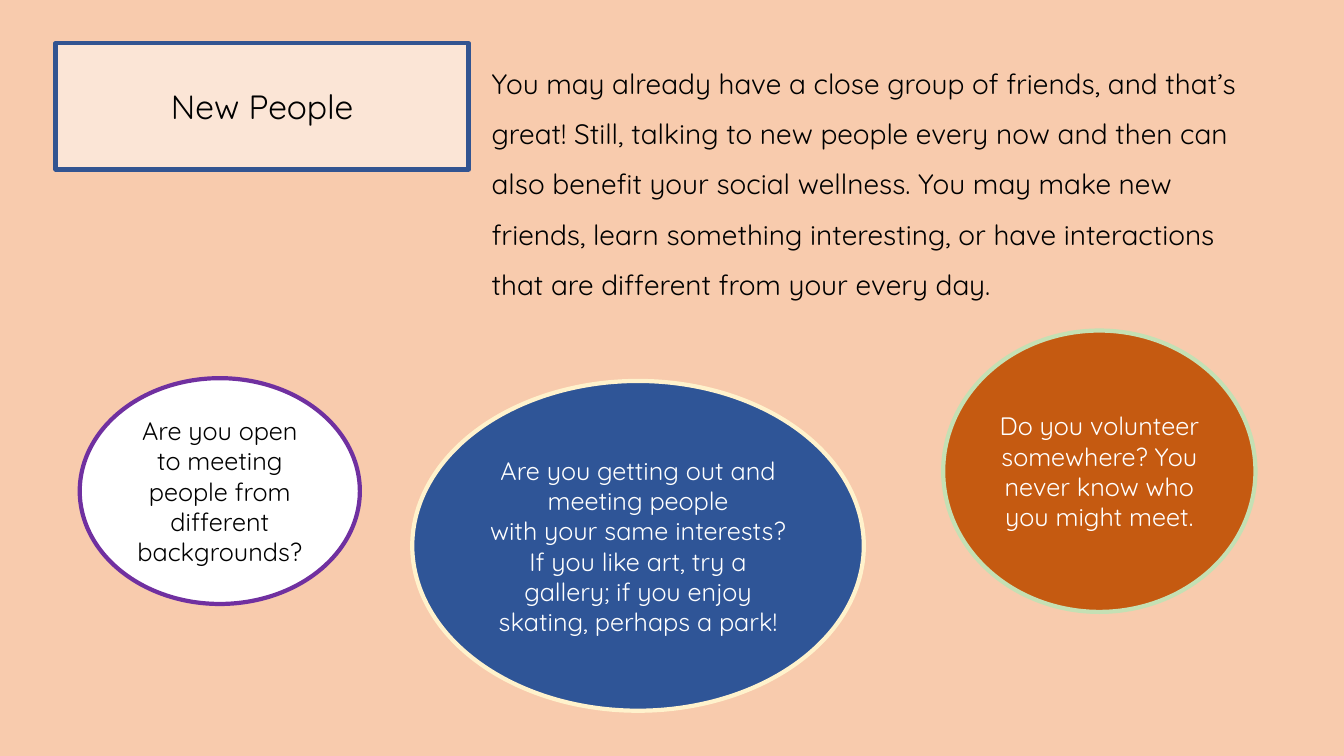
"""Build the "New People" social wellness slide."""
from lxml.etree import SubElement
from pptx import Presentation
from pptx.dml.color import RGBColor
from pptx.enum.shapes import MSO_SHAPE as Shape
from pptx.enum.text import MSO_ANCHOR as Anchor, MSO_AUTO_SIZE as AutoSize, PP_ALIGN as Align
from pptx.oxml.ns import qn
from pptx.util import Cm, Pt

FONT = "Quicksand"
COLOURS = {
    "peach": "F8CBAD",
    "pale_peach": "FBE5D6",
    "navy": "325491",
    "blue": "2F5597",
    "cream": "FFF2CC",
    "orange": "C55A11",
    "green": "C5E0B4",
    "purple": "7030A0",
    "white": "FFFFFF",
    "black": "000000",
}
INTRO = (
    "You may already have a close group of friends, and that’s great! "
    "Still, talking to new people every now and then can also benefit your "
    "social wellness. You may make new friends, learn something interesting, "
    "or have interactions that are different from your every day."
)
QUESTIONS = [
    ((10.39, 9.6, 11.38, 8.31), "blue", "cream", "white",
     ["Are you getting out and meeting people",
      "with your same interests? If you like art, try a gallery; "
      "if you enjoy skating, perhaps a park!"]),
    ((23.77, 8.33, 7.87, 7.09), "orange", "green", "white",
     ["Do you volunteer somewhere? You never know who you might meet."]),
    ((2.01, 9.53, 7.06, 5.69), "white", "purple", "black",
     ["Are you open to meeting people from different backgrounds?"]),
]


def colour(name):
    return RGBColor.from_string(COLOURS[name])


def write(box, paragraphs, size=18, ink="black", align=Align.CENTER,
          anchor=Anchor.MIDDLE, spacing=1.0, fit=AutoSize.NONE):
    frame = box.text_frame
    frame.word_wrap = True
    frame.auto_size = fit
    frame.vertical_anchor = anchor
    for index, text in enumerate(paragraphs):
        para = frame.add_paragraph() if index else frame.paragraphs[0]
        para.alignment = align
        para.line_spacing = spacing
        span = para.add_run()
        span.text = text
        span.font.name = FONT
        span.font.size = Pt(size)
        span.font.color.rgb = colour(ink)


def paint(box, fill, outline):
    box.fill.solid()
    box.fill.fore_color.rgb = colour(fill)
    box.line.color.rgb = colour(outline)
    box.line.width = Pt(3)


def add_title(page, text):
    title = page.shapes.title
    title.left, title.top, title.width, title.height = map(Cm, (1.4, 1.09, 10.41, 3.18))
    geometry = SubElement(title.element.spPr, qn("a:prstGeom"), prst="roundRect")
    SubElement(geometry, qn("a:avLst"))
    paint(title, "pale_peach", "navy")
    write(title, [text], size=24)


def add_intro(page, text):
    box = page.shapes.add_textbox(*map(Cm, (12.14, 1.12, 20.12, 6.5)))
    write(box, [text], size=20, align=Align.LEFT, anchor=Anchor.TOP,
          spacing=1.5, fit=AutoSize.SHAPE_TO_FIT_TEXT)


def add_question(page, place, fill, outline, ink, paragraphs):
    oval = page.shapes.add_shape(Shape.OVAL, *map(Cm, place))
    oval.shadow.inherit = False
    paint(oval, fill, outline)
    write(oval, paragraphs, ink=ink)


def main():
    deck = Presentation()
    deck.slide_width, deck.slide_height = Cm(33.87), Cm(19.05)
    page = deck.slides.add_slide(deck.slide_layouts.get_by_name("Title Only"))
    page.background.fill.solid()
    page.background.fill.fore_color.rgb = colour("peach")
    add_title(page, "New People")
    add_intro(page, INTRO)
    for question in QUESTIONS:
        add_question(page, *question)
    deck.save("out.pptx")


if __name__ == "__main__":
    main()
